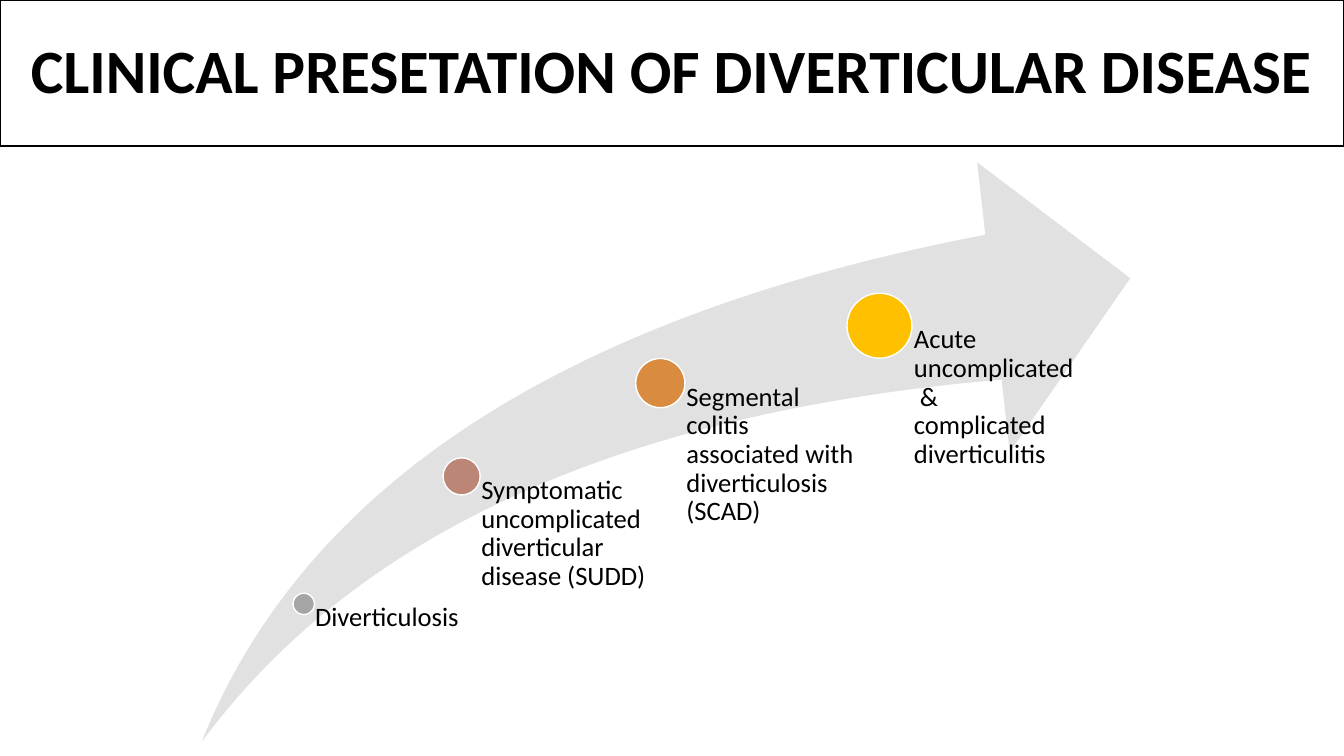
"""Build the slide on the clinical stages of diverticular disease."""
from pptx import Presentation, util as u
from pptx.dml.color import RGBColor
from pptx.enum import shapes, text

SIZE = (13.33, 7.5)
TITLE = "CLINICAL PRESETATION OF DIVERTICULAR DISEASE"
TITLE_H = 1.45
ARROW = (2, 1.61, 9.21, 5.75)
ARROW_FILL = "E1E1E1"
INSET_SHARE = 0.53

# stage text, dot colour, then shares of the arrow: centre x, centre y, dot width, label width
STAGES = [
    ("Diverticulosis", "A5A5A5", 0.11, 0.762, 0.023, 0.17),
    ("Symptomatic uncomplicated diverticular disease (SUDD)", "BB8676", 0.28, 0.542, 0.04, 0.21),
    ("Segmental colitis associated with diverticulosis (SCAD)", "D98B3F", 0.494, 0.381, 0.053, 0.21),
    ("Acute uncomplicated  & complicated diverticulitis", "FFC000", 0.73, 0.282, 0.07, 0.21),
]


def rgb(value):
    """Turn a hex string into a colour."""
    return RGBColor.from_string(value)


def box(*lengths):
    """Convert inches to slide units."""
    return [u.Inches(n) for n in lengths]


def paint(sp, fill, line=None):
    """Give a shape its fill and outline, without a shadow."""
    sp.fill.solid()
    sp.fill.fore_color.rgb = rgb(fill)
    if line:
        sp.line.color.rgb = rgb(line)
        sp.line.width = u.Pt(1)
    else:
        sp.line.fill.background()


def write(tf, words, font, frame, align):
    """Write one paragraph with the given font and frame values."""
    for name, value in frame.items():
        setattr(tf, name, value)
    p = tf.paragraphs[0]
    p.alignment, p.line_spacing = align, 0.9
    r = p.add_run()
    r.text = words
    for name, value in {"name": "Calibri", **font}.items():
        setattr(r.font, name, value)
    r.font.color.rgb = rgb("000000")


def add_preset(group, kind, place, fill, line=None):
    """Add a painted preset shape to the group."""
    sp = group.shapes.add_shape(kind, *box(*place))
    sp.shadow.inherit = False
    paint(sp, fill, line)
    return sp


def main():
    """Lay out the title, the arrow and its stages."""
    prs = Presentation()
    prs.slide_width, prs.slide_height = box(*SIZE)
    s = prs.slides.add_slide(prs.slide_layouts[5])

    title = s.shapes.title
    title.left, title.top, title.width, title.height = box(0, 0, SIZE[0], TITLE_H)
    paint(title, "FFFFFF", "000000")
    write(title.text_frame, TITLE, {"size": u.Pt(44), "bold": True},
          {"vertical_anchor": text.MSO_ANCHOR.MIDDLE, "word_wrap": True,
           "auto_size": text.MSO_AUTO_SIZE.NONE}, text.PP_ALIGN.CENTER)

    group = s.shapes.add_group_shape()
    arrow = add_preset(group, shapes.MSO_SHAPE.SWOOSH_ARROW, ARROW, ARROW_FILL)
    for i in range(2):
        arrow.adjustments[i] = 0.25

    left, top, width, height = ARROW
    for words, colour, x, y, dot, label in STAGES:
        cx, cy, d = left + x * width, top + y * height, dot * width
        add_preset(group, shapes.MSO_SHAPE.OVAL, (cx - d / 2, cy - d / 2, d, d), colour, "FFFFFF")
        tb = group.shapes.add_textbox(*box(cx, cy, label * width, top + height - cy))
        write(tb.text_frame, words, {"size": u.Pt(19)},
              {"margin_left": u.Inches(INSET_SHARE * d), "margin_top": 0, "margin_right": 0,
               "margin_bottom": 0, "word_wrap": True}, text.PP_ALIGN.LEFT)

    prs.save("out.pptx")


if __name__ == "__main__":
    main()
